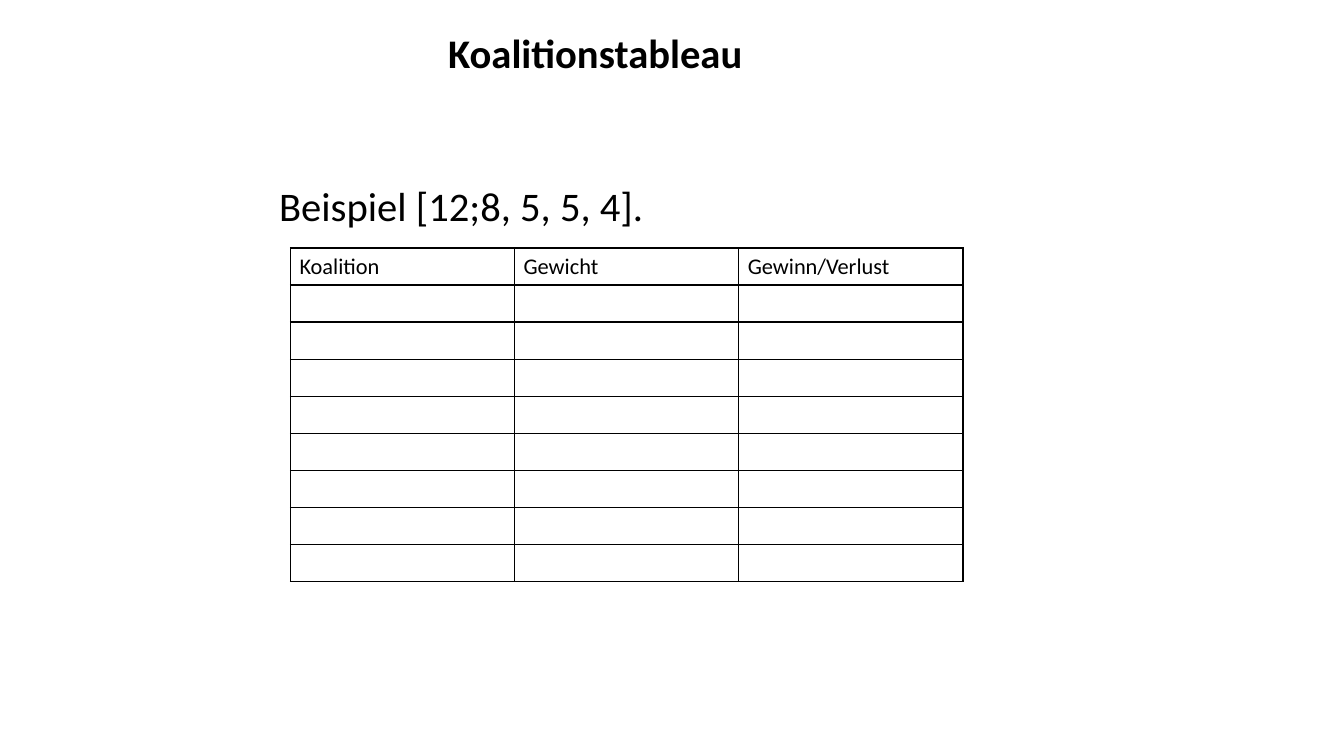
"""Build the coalition tableau slide."""
from dataclasses import dataclass

from lxml import etree
from pptx import Presentation
from pptx.dml.color import RGBColor
from pptx.enum.text import MSO_ANCHOR, PP_ALIGN
from pptx.oxml.ns import qn
from pptx.slide import Slide
from pptx.table import _Cell
from pptx.text.text import TextFrame
from pptx.util import Emu, Inches, Pt

BLACK = RGBColor(0x00, 0x00, 0x00)
LEFT, CENTER = PP_ALIGN.LEFT, PP_ALIGN.CENTER
TOP, MIDDLE = MSO_ANCHOR.TOP, MSO_ANCHOR.MIDDLE
FONT = "Calibri"
HEADING_SIZE, CELL_SIZE = 29, 16
SLIDE_W, SLIDE_H = Inches(13.33), Inches(7.5)
HEADERS = ("Koalition", "Gewicht", "Gewinn/Verlust")
ROW_COUNT = 9
BORDER_WIDTH = Pt(1)


@dataclass(frozen=True)
class Box:
    """Position and size in percent of the slide."""

    left: float
    top: float
    width: float
    height: float

    def emu(self) -> tuple[Emu, Emu, Emu, Emu]:
        """Return the box in slide units."""
        return (Emu(int(SLIDE_W * self.left / 100)), Emu(int(SLIDE_H * self.top / 100)),
                Emu(int(SLIDE_W * self.width / 100)), Emu(int(SLIDE_H * self.height / 100)))


TITLE_BOX = Box(13.13, 1.47, 62.34, 10.8)
EXAMPLE_BOX = Box(20.03, 23.33, 55.44, 7.6)
TABLE_BOX = Box(21.61, 32.8, 50.04, 44.13)


def write(tf: TextFrame, text: str, *, size: float, bold: bool = False,
          align: PP_ALIGN = LEFT, anchor: MSO_ANCHOR = TOP) -> None:
    """Put one formatted line of text into a frame."""
    tf.word_wrap = True
    tf.vertical_anchor = anchor
    p = tf.paragraphs[0]
    p.alignment = align
    r = p.add_run()
    r.text = text
    r.font.name, r.font.size, r.font.bold = FONT, Pt(size), bold
    r.font.color.rgb = BLACK


def add_borders(cell: _Cell) -> None:
    """Draw a thin line on every side of a cell."""
    tc_pr = cell._tc.get_or_add_tcPr()
    for side in ("lnL", "lnR", "lnT", "lnB"):
        ln = etree.SubElement(tc_pr, qn(f"a:{side}"), w=str(BORDER_WIDTH))
        fill = etree.SubElement(ln, qn("a:solidFill"))
        etree.SubElement(fill, qn("a:srgbClr"), val=str(BLACK))


def add_title(s: Slide) -> None:
    """Place and format the title placeholder."""
    sp = s.shapes.title
    sp.left, sp.top, sp.width, sp.height = TITLE_BOX.emu()
    tf = sp.text_frame
    tf.margin_left = tf.margin_right = Inches(0.09)
    tf.margin_top = tf.margin_bottom = Inches(0.04)
    write(tf, "Koalitionstableau", size=HEADING_SIZE, bold=True, align=CENTER, anchor=MIDDLE)


def add_tableau(s: Slide) -> None:
    """Add the ruled table with its header row."""
    table = s.shapes.add_table(ROW_COUNT, len(HEADERS), *TABLE_BOX.emu()).table
    table.first_row = table.horz_banding = False
    for cell in table.iter_cells():
        cell.margin_left = cell.margin_right = Inches(0.09)
        cell.margin_top = cell.margin_bottom = Inches(0.05)
        add_borders(cell)
        cell.fill.background()
        p = cell.text_frame.paragraphs[0]
        etree.SubElement(p._p, qn("a:endParaRPr"), sz=str(CELL_SIZE * 100))
    for col, header in enumerate(HEADERS):
        write(table.cell(0, col).text_frame, header, size=CELL_SIZE)


def main() -> None:
    """Build and save the slide."""
    prs = Presentation()
    prs.slide_width, prs.slide_height = SLIDE_W, SLIDE_H
    s = prs.slides.add_slide(prs.slide_layouts[5])
    add_title(s)
    sp = s.shapes.add_textbox(*EXAMPLE_BOX.emu())
    write(sp.text_frame, "Beispiel [12;8, 5, 5, 4].", size=HEADING_SIZE)
    add_tableau(s)
    prs.save("out.pptx")


if __name__ == "__main__":
    main()
